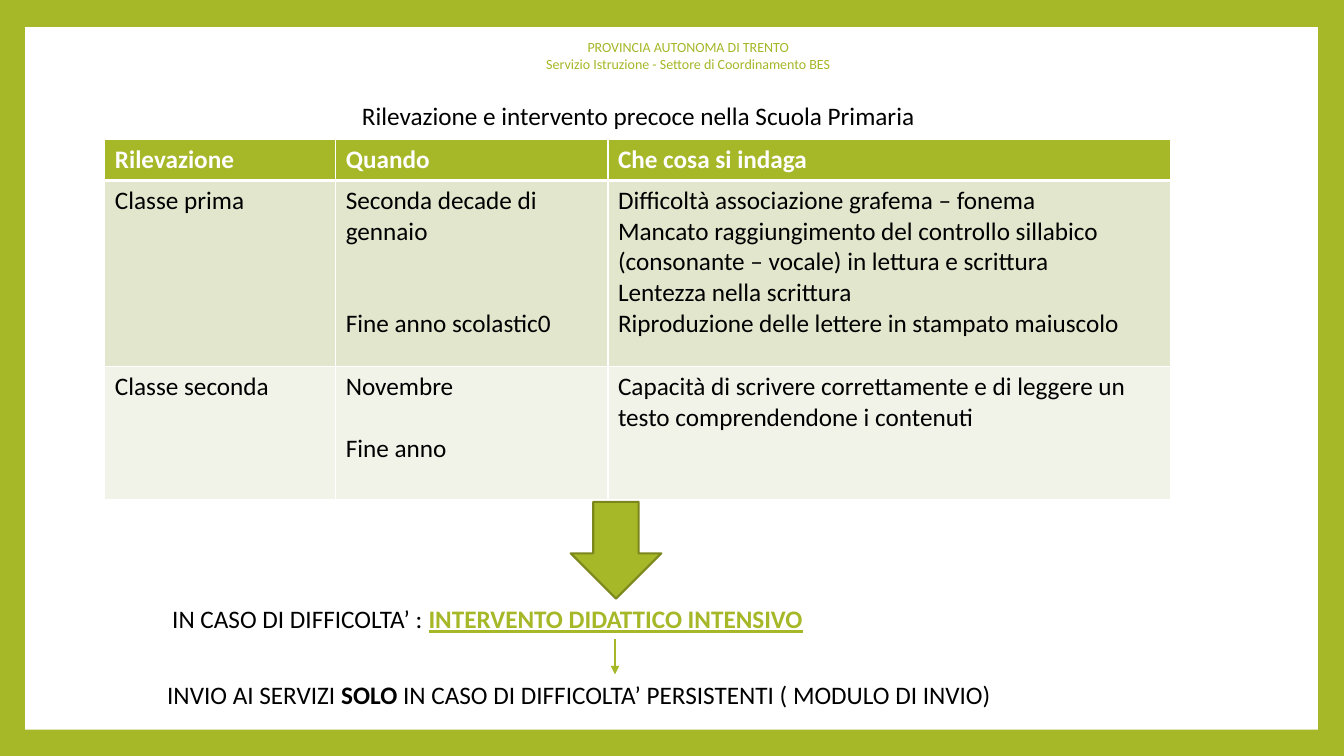
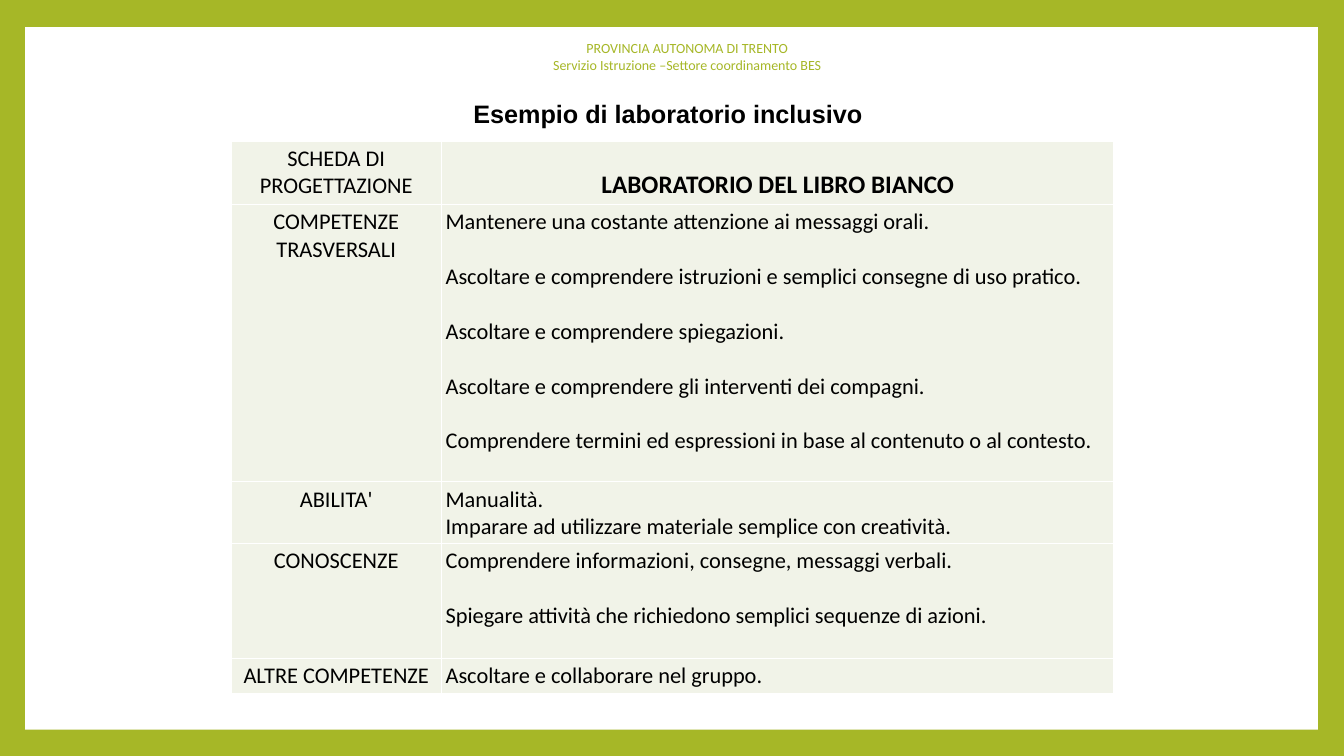
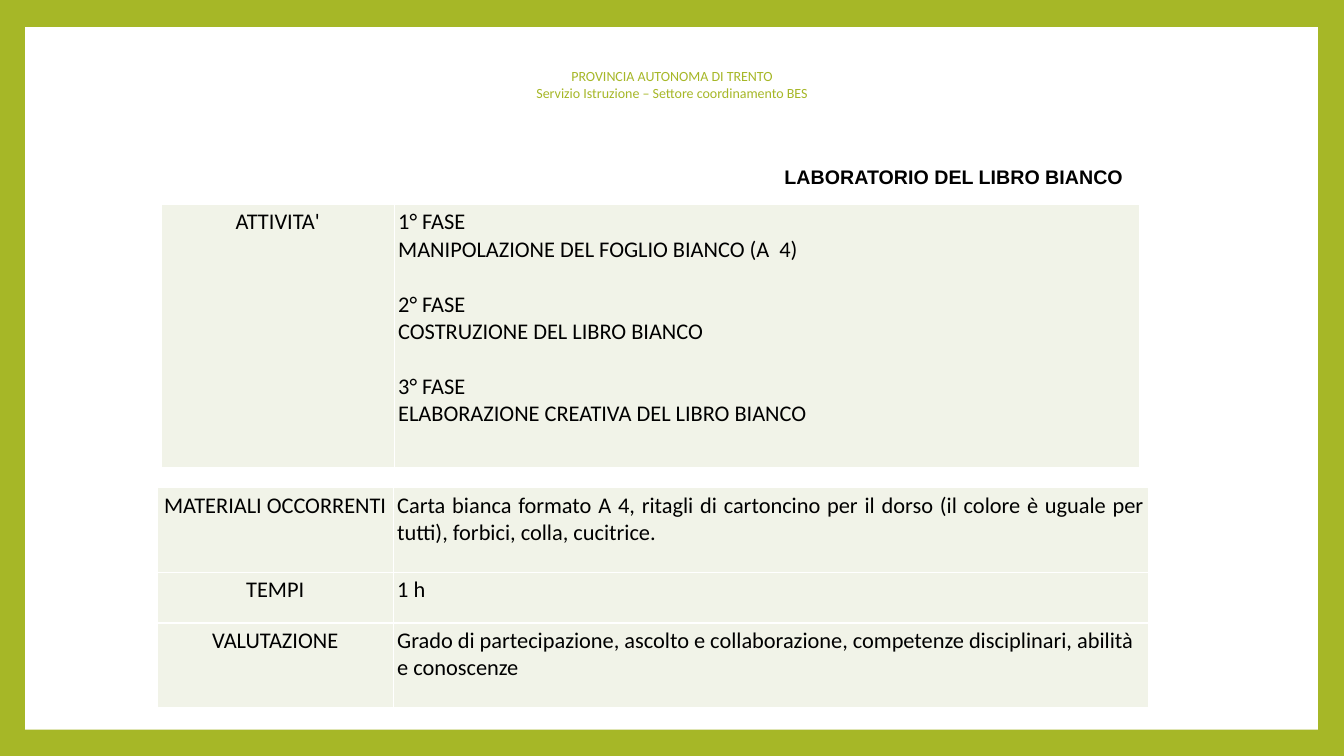
"""Builds three slides on early detection and an inclusive workshop."""
from dataclasses import dataclass

from lxml.etree import SubElement
from pptx import Presentation
from pptx.dml.color import RGBColor
from pptx.enum.shapes import MSO_CONNECTOR as Connector, MSO_SHAPE as Shape
from pptx.enum.text import MSO_ANCHOR as Anchor, MSO_AUTO_SIZE as AutoSize, PP_ALIGN as Align
from pptx.oxml.ns import qn
from pptx.util import Inches, Pt


@dataclass(frozen=True)
class Theme:
    green: str = "A6B727"
    dark_green: str = "7B871D"
    band: str = "E1E6CD"
    pale: str = "F1F3E8"
    white: str = "FFFFFF"
    black: str = "000000"
    body_font: str = "Calibri"
    title_font: str = "Arial"
    large: int = 18
    medium: int = 16
    small: int = 14
    tiny: int = 10
    line_height: float = 1.22


THEME = Theme()
WIDTH, HEIGHT = 13.33, 7.5
PANEL = (0.25, 0.27, 12.82, 6.97)
PROVINCE = "PROVINCIA AUTONOMA DI TRENTO"
TIGHT = 0.04

HEADERS = [
    ("Servizio Istruzione - Settore di Coordinamento BES", 3.49, 0.33),
    ("Servizio Istruzione –Settore coordinamento BES", 3.48, 0.34),
    ("Servizio Istruzione – Settore coordinamento BES", 3.33, 0.62),
]
TITLES = [
    ("Rilevazione e intervento precoce nella Scuola Primaria", (3.49, 0.94, 5.81, 0.4),
     dict(size=THEME.large)),
    ("Esempio di laboratorio inclusivo", (4.25, 0.93, 4.75, 0.4),
     dict(size=THEME.large, font=THEME.title_font, bold=True, align=Align.CENTER)),
    ("LABORATORIO DEL LIBRO BIANCO", (7.67, 1.59, 3.58, 0.34),
     dict(size=THEME.small, font=THEME.title_font, bold=True, align=Align.CENTER)),
]

DETECTION = [
    (["Rilevazione"], ["Quando"], ["Che cosa si indaga"]),
    (["Classe prima"],
     ["Seconda decade di gennaio", ("Fine anno scolastic0", 2)],
     ["Difficoltà associazione grafema – fonema",
      "Mancato raggiungimento del controllo sillabico (consonante – vocale) in lettura e scrittura",
      "Lentezza nella scrittura",
      "Riproduzione delle lettere in stampato maiuscolo"]),
    (["Classe seconda"],
     ["Novembre", ("Fine anno", 1)],
     ["Capacità di scrivere correttamente e di leggere un testo comprendendone i contenuti"]),
]
PLANNING = [
    (["SCHEDA DI PROGETTAZIONE"], ["LABORATORIO DEL LIBRO BIANCO"]),
    (["COMPETENZE", "TRASVERSALI"],
     ["Mantenere una costante attenzione ai messaggi orali.",
      ("Ascoltare e comprendere istruzioni e semplici consegne di uso pratico.", 1),
      ("Ascoltare e comprendere spiegazioni.", 1),
      ("Ascoltare e comprendere gli interventi dei compagni.", 1),
      ("Comprendere termini ed espressioni in base al contenuto o al contesto.", 1)]),
    (["ABILITA'"],
     ["Manualità.", "Imparare ad utilizzare materiale semplice con creatività."]),
    (["CONOSCENZE"],
     ["Comprendere informazioni, consegne, messaggi verbali.",
      ("Spiegare attività che richiedono semplici sequenze di azioni.", 1)]),
    (["ALTRE COMPETENZE"], ["Ascoltare e collaborare nel gruppo."]),
]
ACTIVITIES = [
    (["ATTIVITA'"],
     ["1° FASE", "MANIPOLAZIONE DEL FOGLIO BIANCO (A  4)",
      ("2° FASE", 1), "COSTRUZIONE DEL LIBRO BIANCO",
      ("3° FASE", 1), "ELABORAZIONE CREATIVA DEL LIBRO BIANCO"]),
]
RESOURCES = [
    (["MATERIALI OCCORRENTI"],
     ["Carta bianca formato A 4, ritagli di cartoncino per il dorso "
      "(il colore è uguale per tutti), forbici, colla, cucitrice."]),
    (["TEMPI"], ["1 h"]),
    (["VALUTAZIONE"],
     ["Grado di partecipazione, ascolto e collaborazione, competenze disciplinari, "
      "abilità e conoscenze"]),
]
OUTCOMES = [
    ((1.61, 5.94, 7.88, 0.4),
     ["IN CASO DI DIFFICOLTA’ : ",
      ("INTERVENTO DIDATTICO INTENSIVO", dict(colour=THEME.green, bold=True, underline=True))]),
    ((1.56, 6.69, 9.19, 0.4),
     ["INVIO AI SERVIZI ", ("SOLO", dict(bold=True)),
      " IN CASO DI DIFFICOLTA’ PERSISTENTI ( MODULO DI INVIO)"]),
]


def rgb(colour):
    return RGBColor.from_string(colour)


def inches(box):
    return [Inches(length) for length in box]


def write(frame, paragraphs, align=Align.LEFT, **style):
    """Fill a frame; a paragraph is text, (text, blank lines above) or a list of runs."""
    for index, content in enumerate(paragraphs):
        paragraph = frame.paragraphs[0] if index == 0 else frame.add_paragraph()
        paragraph.alignment = align
        content, gap = content if isinstance(content, tuple) else (content, 0)
        if gap:
            paragraph.space_before = Pt(round(gap * style["size"] * THEME.line_height, 1))
        for part in content if isinstance(content, list) else [content]:
            text, changes = part if isinstance(part, tuple) else (part, {})
            look = dict(font=THEME.body_font, colour=THEME.black, bold=False,
                        underline=False) | style | changes
            run = paragraph.add_run()
            run.text = text
            run.font.name = look["font"]
            run.font.size = Pt(look["size"])
            run.font.bold = look["bold"]
            run.font.underline = look["underline"]
            run.font.color.rgb = rgb(look["colour"])


def add_text(slide, box, paragraphs, **style):
    frame = slide.shapes.add_textbox(*inches(box)).text_frame
    frame.word_wrap = True
    write(frame, paragraphs, **style)


def paint(shape, fill, line=None, width=1.5):
    shape.shadow.inherit = False
    shape.fill.solid()
    shape.fill.fore_color.rgb = rgb(fill)
    if line:
        shape.line.color.rgb = rgb(line)
        shape.line.width = Pt(width)
    else:
        shape.line.fill.background()


def set_borders(cell, bottom=1):
    properties = cell._tc.get_or_add_tcPr()
    for side, width in zip("LRTB", (1, 1, 1, bottom)):
        line = SubElement(properties, qn(f"a:ln{side}"), w=str(Pt(width)))
        SubElement(SubElement(line, qn("a:solidFill")), qn("a:srgbClr"), val=THEME.white)


def add_table(slide, position, columns, heights, rows, cell_style):
    """Add a table; cell_style(row, column) gives fill, margin, anchor, bottom border and text style."""
    box = inches((*position, sum(columns), sum(heights)))
    table = slide.shapes.add_table(len(rows), len(columns), *box).table
    table.first_row = table.horz_banding = False
    for column, width in zip(table.columns, columns):
        column.width = Inches(width)
    for row_index, (row, height) in enumerate(zip(rows, heights)):
        table.rows[row_index].height = Inches(height)
        for column_index, paragraphs in enumerate(row):
            cell = table.cell(row_index, column_index)
            style = cell_style(row_index, column_index)
            set_borders(cell, style.pop("bottom", 1))
            cell.fill.solid()
            cell.fill.fore_color.rgb = rgb(style.pop("fill"))
            cell.vertical_anchor = style.pop("anchor", Anchor.TOP)
            margin = style.pop("margin", None)
            if margin:
                cell.margin_left = cell.margin_right = Inches(margin)
                cell.margin_top = cell.margin_bottom = Inches(margin)
            write(cell.text_frame, paragraphs, **style)


def detection_style(row, column):
    if row == 0:
        return dict(fill=THEME.green, bottom=3, size=THEME.large, colour=THEME.white, bold=True)
    return dict(fill=THEME.band if row % 2 else THEME.pale, size=THEME.large)


def sheet_style(row, column):
    return dict(fill=THEME.pale, margin=TIGHT, size=THEME.medium,
                align=Align.LEFT if column else Align.CENTER)


def planning_style(row, column):
    style = sheet_style(row, column)
    if (row, column) == (0, 1):
        style |= dict(size=THEME.large, bold=True, align=Align.CENTER, anchor=Anchor.BOTTOM)
    return style


def resources_style(row, column):
    style = sheet_style(row, column)
    if (row, column) == (0, 1):
        style["align"] = Align.JUSTIFY
    return style


def add_slide(presentation, layout, header, title):
    slide = presentation.slides.add_slide(layout)
    text, box, style = title
    holder = slide.shapes.title
    holder.left, holder.top, holder.width, holder.height = inches(box)
    frame = holder.text_frame
    frame.auto_size = AutoSize.NONE
    frame.word_wrap = False
    frame.vertical_anchor = Anchor.TOP
    write(frame, [text], **style)
    service, left, top = header
    add_text(slide, (left, top, 6.67, 0.44), [PROVINCE, service],
             size=THEME.tiny, colour=THEME.green, align=Align.CENTER)
    return slide


def add_arrow(slide, start, end):
    arrow = slide.shapes.add_connector(Connector.STRAIGHT, *inches(start + end))
    arrow.line.color.rgb = rgb(THEME.green)
    arrow.line.width = Pt(0.79)
    SubElement(arrow.line._get_or_add_ln(), qn("a:tailEnd"), type="triangle")
    SubElement(arrow._element.spPr, qn("a:effectLst"))


def main():
    presentation = Presentation()
    presentation.slide_width, presentation.slide_height = inches((WIDTH, HEIGHT))
    background = presentation.slide_master.background.fill
    background.solid()
    background.fore_color.rgb = rgb(THEME.green)
    layout = presentation.slide_layouts.get_by_name("Title Only")
    detection, planning, activities = [
        add_slide(presentation, layout, header, title) for header, title in zip(HEADERS, TITLES)]

    panel = detection.shapes.add_shape(Shape.RECTANGLE, *inches(PANEL))
    paint(panel, THEME.white)
    layout.shapes.element.insert(2, panel.element)

    add_table(detection, (1.04, 1.38), (2.29, 2.7, 5.58), (0.41, 1.85, 1.32),
              DETECTION, detection_style)
    down_arrow = detection.shapes.add_shape(Shape.DOWN_ARROW, *inches((5.66, 4.98, 0.9, 0.96)))
    paint(down_arrow, THEME.green, THEME.dark_green)
    for box, runs in OUTCOMES:
        add_text(detection, box, [runs], size=THEME.large)
    add_arrow(detection, (6.1, 6.34), (6.1, 6.69))

    add_table(planning, (2.29, 1.4), (2.09, 6.67), (0.63, 2.75, 0.61, 1.14, 0.35),
              PLANNING, planning_style)
    add_table(activities, (1.6, 2.03), (2.31, 7.39), (2.61,), ACTIVITIES, sheet_style)
    add_table(activities, (1.56, 4.84), (2.34, 7.49), (0.84, 0.5, 0.84),
              RESOURCES, resources_style)
    presentation.save("out.pptx")


if __name__ == "__main__":
    main()
